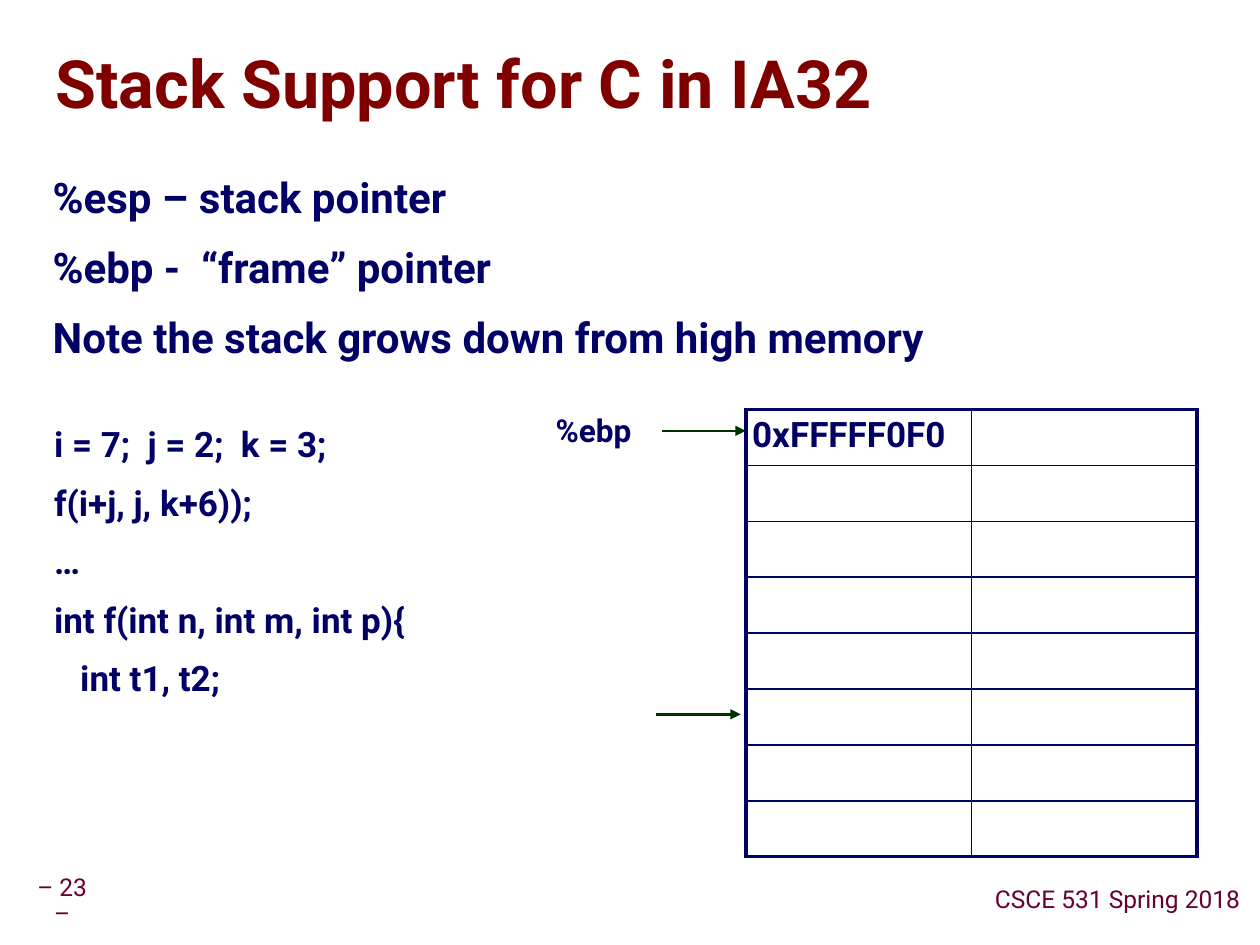
from dataclasses import dataclass

from lxml import etree
from pptx import Presentation
from pptx.dml.color import RGBColor
from pptx.enum.shapes import MSO_CONNECTOR
from pptx.enum.text import MSO_ANCHOR, PP_ALIGN
from pptx.oxml.ns import qn
from pptx.util import Pt

LEFT = PP_ALIGN.LEFT
CENTER = PP_ALIGN.CENTER
TOP = MSO_ANCHOR.TOP
MIDDLE = MSO_ANCHOR.MIDDLE
STRAIGHT = MSO_CONNECTOR.STRAIGHT


@dataclass(frozen=True)
class Theme:
    font: str = "Roboto"
    title: str = "800000"
    text: str = "000066"
    footer: str = "660033"
    arrow: str = "003300"
    shadow: str = "969696"
    title_size: float = 38
    body_size: float = 24
    code_size: float = 20
    label_size: float = 18
    footer_size: float = 14
    thick: float = 2.25
    thin: float = 1


THEME = Theme()
SMALL_INSETS = (3.6, 3.6)
TEXT_INSETS = (7.2, 3.6)


def write_text(frame, lines, size, color=THEME.text, bold=True, align=LEFT,
               spacing=0.95, hanging=0):
    for index, line in enumerate(lines):
        paragraph = frame.add_paragraph() if index else frame.paragraphs[0]
        paragraph.alignment = align
        paragraph.line_spacing = spacing
        paragraph.space_before = Pt(round(0.53 * size, 1) if index else 0)
        if hanging:
            properties = paragraph._p.get_or_add_pPr()
            properties.set("marL", str(Pt(hanging)))
            properties.set("indent", str(-Pt(hanging)))
        run = paragraph.add_run()
        run.text = line
        run.font.name = THEME.font
        run.font.size = Pt(size)
        run.font.bold = bold
        run.font.color.rgb = RGBColor.from_string(color)


def add_text(slide, box, lines, size, insets=SMALL_INSETS, anchor=TOP,
             wrap=True, **text_format):
    shape = slide.shapes.add_textbox(*map(Pt, box))
    frame = shape.text_frame
    frame.word_wrap = wrap
    frame.vertical_anchor = anchor
    frame.margin_left = frame.margin_right = Pt(insets[0])
    frame.margin_top = frame.margin_bottom = Pt(insets[1])
    write_text(frame, lines, size, **text_format)
    return shape


def add_text_shadow(shape):
    for run in shape.text_frame.paragraphs[0].runs:
        properties = run.font._element
        effects = etree.Element(qn("a:effectLst"))
        shadow = etree.SubElement(effects, qn("a:outerShdw"),
                                  dist=str(Pt(3)), dir="2700000")
        etree.SubElement(shadow, qn("a:srgbClr"), val=THEME.shadow)
        properties.find(qn("a:solidFill")).addnext(effects)


def add_arrow(slide, x, y, length):
    arrow = slide.shapes.add_connector(STRAIGHT, Pt(x), Pt(y), Pt(x + length), Pt(y))
    arrow.line.color.rgb = RGBColor.from_string(THEME.arrow)
    arrow.line.width = Pt(1.5)
    etree.SubElement(arrow.line._get_or_add_ln(), qn("a:tailEnd"), type="triangle")
    etree.SubElement(arrow._element.spPr, qn("a:effectLst"))


def set_borders(cell, outer_sides):
    properties = cell._tc.get_or_add_tcPr()
    for side in "LRTB":
        width = THEME.thick if side in outer_sides else THEME.thin
        line = etree.SubElement(properties, qn(f"a:ln{side}"), w=str(Pt(width)))
        fill = etree.SubElement(line, qn("a:solidFill"))
        etree.SubElement(fill, qn("a:srgbClr"), val=THEME.text)


def add_stack_table(slide, left, top, row_count, column_width, row_height):
    table = slide.shapes.add_table(
        row_count, 2, Pt(left), Pt(top),
        Pt(2 * column_width), Pt(row_count * row_height)).table
    table.first_row = table.horz_banding = False
    for column in table.columns:
        column.width = Pt(column_width)
    for index, row in enumerate(table.rows):
        row.height = Pt(row_height)
        vertical = {0: "T", row_count - 1: "B"}.get(index, "")
        for cell, side in zip(row.cells, "LR"):
            set_borders(cell, side + vertical)
            cell.fill.background()
            cell.margin_left = cell.margin_right = Pt(3.6)
            cell.margin_top = cell.margin_bottom = Pt(3.6)
    write_text(table.cell(0, 0).text_frame, ["0xFFFFF0F0"], THEME.code_size)


def add_footers(slide):
    footers = [
        ((17, 504, 37, 22.3), "– 23 –", True),
        ((561.6, 503.3, 154.1, 22.3), "CSCE 531 Spring 2018", False),
    ]
    for box, text, wrap in footers:
        add_text(slide, box, [text], THEME.footer_size, anchor=MIDDLE, wrap=wrap,
                 color=THEME.footer, bold=False, align=CENTER, spacing=0.9)


def main():
    presentation = Presentation()
    presentation.slide_width = Pt(720)
    presentation.slide_height = Pt(540)
    slide = presentation.slides.add_slide(presentation.slide_layouts[6])

    add_footers(slide)
    title = add_text(slide, (31.7, 19.4, 686.2, 61.2), ["Stack Support for C in IA32"],
                     THEME.title_size, insets=(0, 0), anchor=MIDDLE,
                     color=THEME.title, spacing=0.87)
    add_text_shadow(title)
    add_text(slide, (23, 96.5, 673.2, 126), [
        "%esp – stack pointer",
        "%ebp -  “frame” pointer",
        "Note the stack grows down from high memory",
    ], THEME.body_size, insets=TEXT_INSETS)
    add_stack_table(slide, 426.2, 234, row_count=8, column_width=128.9, row_height=31.95)
    add_text(slide, (23.8, 239.8, 246.2, 252), [
        "i = 7;  j = 2;  k = 3;",
        "f(i+j, j, k+6));",
        "…",
        "int f(int n, int m, int p){",
        "   int t1, t2;",
    ], THEME.code_size, insets=TEXT_INSETS, hanging=27)
    add_text(slide, (311.8, 234, 54.7, 26.6), ["%ebp"], THEME.label_size,
             wrap=False, align=CENTER, spacing=0.9)
    for x, y in [(375.1, 408.2), (378, 246.2)]:
        add_arrow(slide, x, y, length=48.2)

    presentation.save("out.pptx")


if __name__ == "__main__":
    main()
